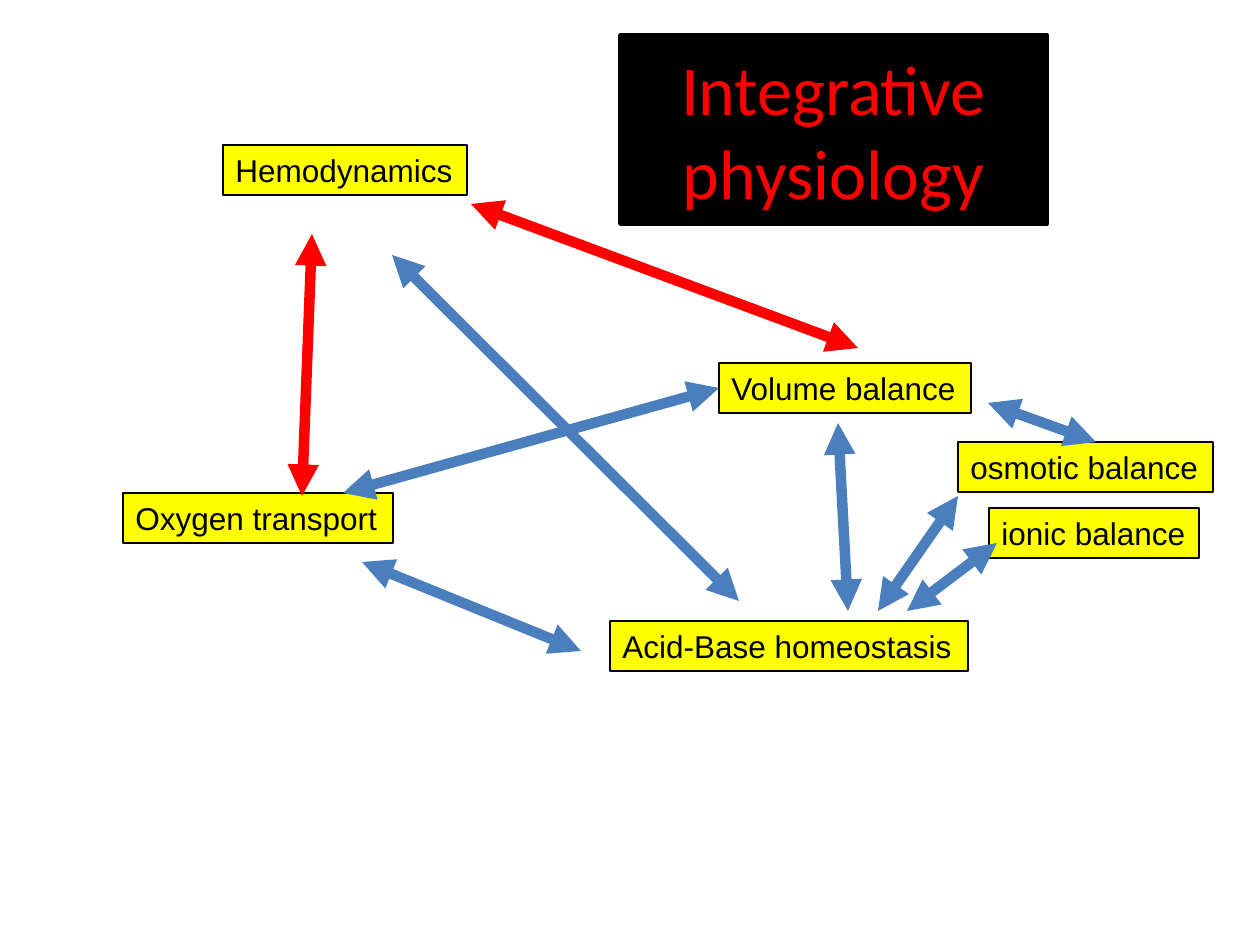
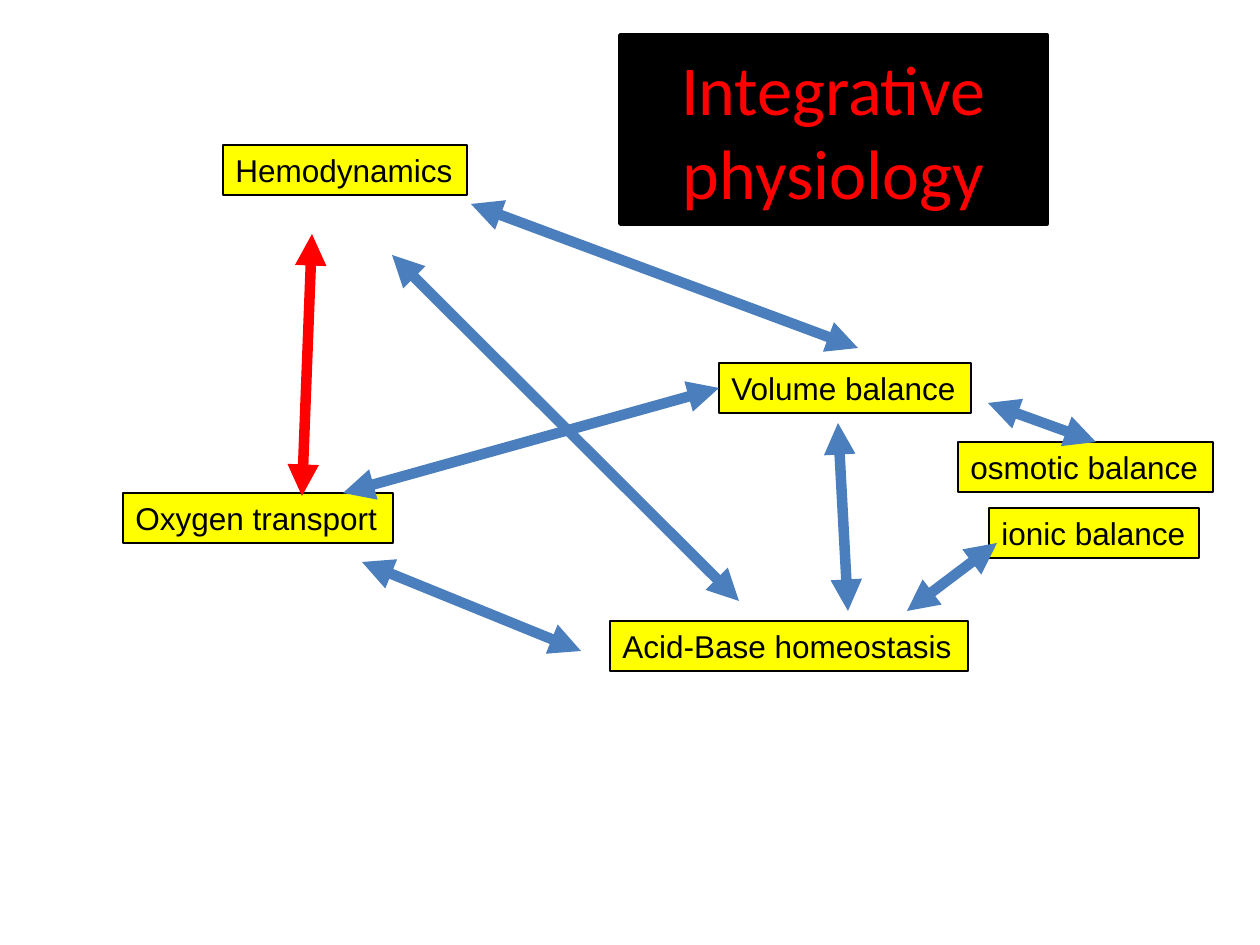
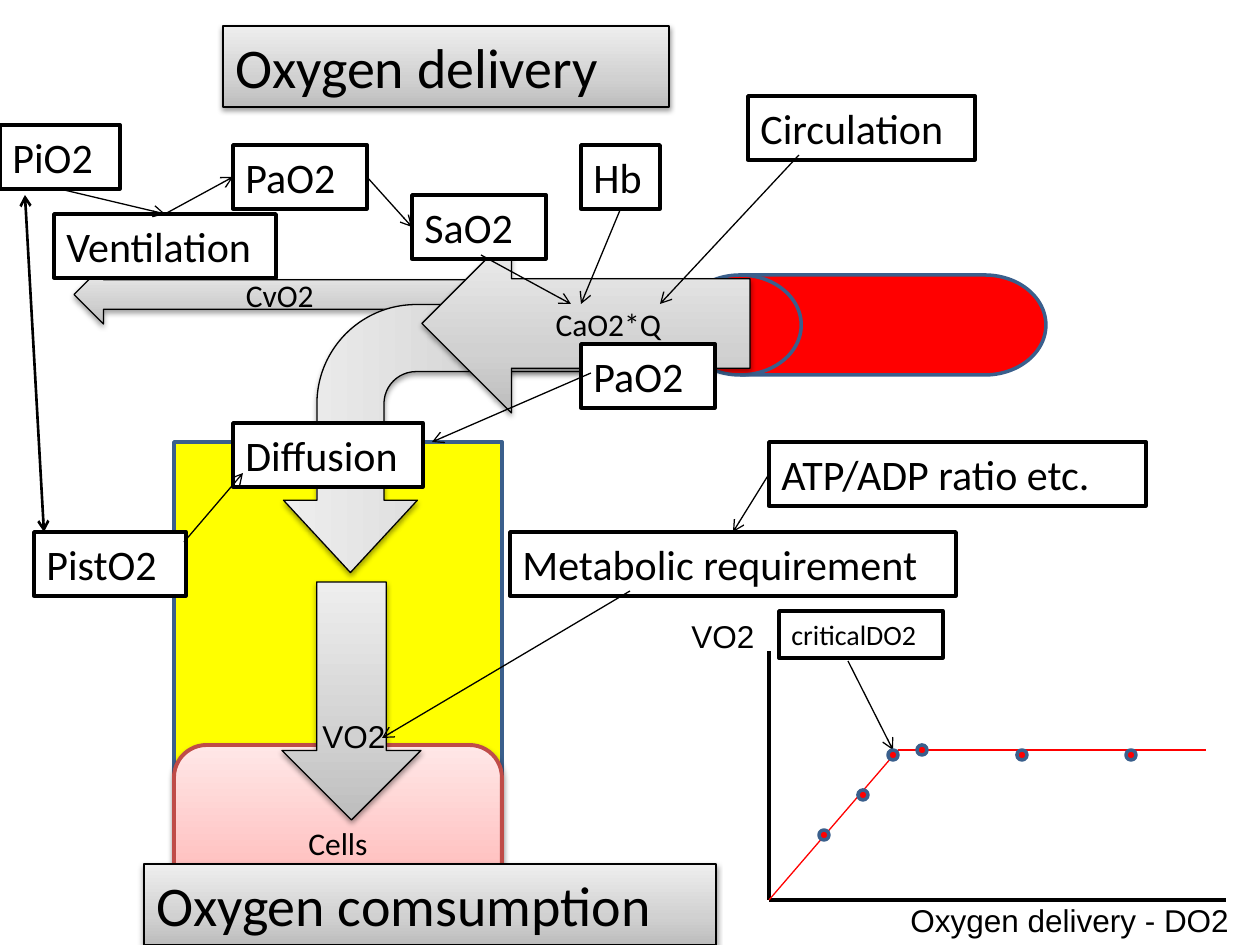
"""Build three slides on integrative physiology and oxygen delivery."""
from copy import deepcopy

from lxml.etree import SubElement
from pptx import Presentation
from pptx.dml.color import RGBColor
from pptx.enum.shapes import MSO_CONNECTOR, MSO_SHAPE
from pptx.enum.text import MSO_ANCHOR, MSO_AUTO_SIZE, PP_ALIGN
from pptx.oxml.ns import qn
from pptx.util import Emu, Pt

HEX = {
    "black": "000000", "white": "FFFFFF", "red": "FF0000", "yellow": "FFFF00",
    "blue": "4B7EBC", "navy": "3A5F8C", "brick": "BF4C48",
}
GREY = ("BDBDBD", "D1D1D1", "EEEEEE")
PINK = ("FFA6A5", "FFC0BF", "FFE7E7")
STOPS = (0, 0.35, 1)
TOP, LEFT, BOTTOM, RIGHT = range(4)
WIDE, HIGH = 1260, 945
UNIT = 914400 / 126

TOPICS = {
    "Hemodynamics": (223, 145, 244),
    "Volume balance": (719, 363, 252),
    "Oxygen transport": (123, 493, 270),
    "Acid-Base homeostasis": (610, 621, 358),
    "osmotic balance": (958, 442, 255),
    "ionic balance": (989, 508, 210),
}
BLOOD, FLUID, ACID = (
    ((312, 234), (302, 496)), ((471, 204), (858, 348)), ((958, 496), (878, 611)),
)
LINKS = (
    ((392, 255), (739, 601)), ((581, 651), (362, 562)), ((848, 611), (838, 423)),
    ((1096, 442), (988, 403)), ((997, 543), (907, 611)),
)
FACTORS = {
    "PaO2": (233, 145, 134), "SaO2": (412, 195, 134), "Hb": (581, 145, 79),
    "Circulation": (748, 96, 227), "Ventilation": (54, 214, 222),
    "PiO2": (0, 125, 120), "PistO2": (34, 532, 152), "Diffusion": (233, 423, 190),
    "Metabolic requirement": (510, 532, 446), "ATP/ADP ratio etc.": (769, 442, 377),
}
DOTS = ((1126, 750), (1017, 750), (917, 745), (888, 750), (858, 790), (819, 830))


def px(*sizes):
    """Turn whole pixels into EMU."""
    return [Emu(round(size * UNIT)) for size in sizes]


def tint(name):
    """Look up a named colour."""
    return RGBColor.from_string(HEX[name])


def blend(shape, shades):
    """Fill a shape with a three-stop gradient and give it a soft shadow."""
    shape.fill.gradient()
    shape.fill.gradient_angle = 90
    first = shape.element.spPr.find(qn("a:gradFill")).find(qn("a:gsLst"))[0]
    first.addnext(deepcopy(first))
    for stop, place, shade in zip(shape.fill.gradient_stops, STOPS, shades):
        stop.position = place
        stop.color.rgb = RGBColor.from_string(shade)
    shape.shadow.inherit = False
    effects = shape.element.spPr.find(qn("a:effectLst"))
    shadow = SubElement(effects, qn("a:outerShdw"), blurRad="40000", dist="20000",
                        dir="5400000", rotWithShape="0")
    black = SubElement(shadow, qn("a:srgbClr"), val=HEX["black"])
    SubElement(black, qn("a:alpha"), val="38000")


def paint(shape, fill, edge="black", width=0.75):
    """Set fill and outline; a tuple of shades makes a gradient."""
    shape.line.color.rgb = tint(edge)
    shape.line.width = Pt(width)
    if isinstance(fill, tuple):
        blend(shape, fill)
    else:
        shape.fill.solid()
        shape.fill.fore_color.rgb = tint(fill)


def write(shape, text, size, face="Calibri", color="black", align=PP_ALIGN.LEFT,
          anchor=MSO_ANCHOR.TOP):
    """Put one styled paragraph in a shape."""
    frame = shape.text_frame
    frame.text = text
    frame.vertical_anchor = anchor
    para = frame.paragraphs[0]
    para.alignment = align
    para.font.size, para.font.name = Pt(size), face
    para.font.color.rgb = tint(color)


def label(shapes, text, x, y, w, h, size, face="Calibri"):
    """Add a one-line text box."""
    box = shapes.add_textbox(*px(x, y, w, h))
    write(box, text, size, face)
    box.text_frame.word_wrap = False
    box.text_frame.auto_size = MSO_AUTO_SIZE.SHAPE_TO_FIT_TEXT
    return box


def factor(shapes, text, x, y, w, h=64, size=24):
    """Add a white framed label."""
    box = label(shapes, text, x, y, w, h, size)
    paint(box, "white", width=2)
    return box


def solid(shapes, kind, spot, fill, edge="black", width=0.75, text=""):
    """Add a preset shape with optional centred text."""
    shape = shapes.add_shape(kind, *px(*spot))
    shape.shadow.inherit = False
    paint(shape, fill, edge, width)
    if text:
        write(shape, text, 18, align=PP_ALIGN.CENTER, anchor=MSO_ANCHOR.MIDDLE)
    return shape


def flip(shape, axis):
    """Mirror a shape along H or V."""
    shape.element.spPr.find(qn("a:xfrm")).set("flip" + axis, "1")


def link(shapes, start, end, color="black", width=0.75, head=None, tail=None):
    """Draw a line between ends, each a point or a (box, side) pair."""
    spots = [end_ if isinstance(end_[0], int) else (0, 0) for end_ in (start, end)]
    line = shapes.add_connector(MSO_CONNECTOR.STRAIGHT, *px(*spots[0], *spots[1]))
    for spot, join in ((start, line.begin_connect), (end, line.end_connect)):
        if not isinstance(spot[0], int):
            join(*spot)
    line.line.color.rgb = tint(color)
    line.line.width = Pt(width)
    props = line.element.spPr
    for tag, tip in (("a:headEnd", head), ("a:tailEnd", tail)):
        if tip:
            SubElement(props.find(qn("a:ln")), qn(tag), type=tip)
    SubElement(props, qn("a:effectLst"))


def begin(deck, text, spot):
    """Add a title-only slide and place its title."""
    slide = deck.slides.add_slide(deck.slide_layouts[5])
    title = slide.shapes.title
    title.left, title.top, title.width, title.height = px(*spot)
    title.text_frame.text = text
    title.text_frame.word_wrap = True
    title.text_frame.auto_size = MSO_AUTO_SIZE.NONE
    return slide.shapes, title


def topics(deck, strong, weak):
    """Build the map of topics with strong links in red."""
    shapes, title = begin(deck, "Integrative physiology", (620, 35, 427, 189))
    shape = SubElement(title.element.spPr, qn("a:prstGeom"), prst="roundRect")
    SubElement(shape, qn("a:avLst"))
    paint(title, "black", width=2)
    write(title, "Integrative physiology", 40, color="red", align=PP_ALIGN.CENTER,
          anchor=MSO_ANCHOR.MIDDLE)
    boxes = {}
    for text, spot in TOPICS.items():
        boxes[text] = label(shapes, text, *spot, 50, 18, "Arial")
        paint(boxes[text], "yellow")
    volume = ((boxes["Volume balance"], LEFT), (343, 493))
    for color, pairs in (("blue", (*LINKS, volume, *weak)), ("red", strong)):
        for start, end in pairs:
            link(shapes, start, end, color, 6, "triangle", "triangle")


def tissue(shapes):
    """Draw the vessel, the tissue and the flow arrows."""
    solid(shapes, MSO_SHAPE.LEFT_ARROW, (74, 265, 397, 59), GREY, text="CvO2")
    solid(shapes, MSO_SHAPE.RECTANGLE, (174, 442, 328, 427), "yellow", "navy", 2)
    bend = solid(shapes, MSO_SHAPE.BENT_ARROW, (333, 255, 268, 367), GREY)
    bend.rotation = 90
    flip(bend, "V")
    for index, value in enumerate((0.25, 0.25, 0.27, 0.37)):
        bend.adjustments[index] = value
    solid(shapes, MSO_SHAPE.ROUNDED_RECTANGLE, (174, 745, 328, 195), PINK, "brick",
          2.25, "Cells")
    drum = solid(shapes, MSO_SHAPE.FLOWCHART_DIRECT_ACCESS_STORAGE,
                 (679, 275, 367, 100), "red", "navy", 2)
    flip(drum, "H")
    solid(shapes, MSO_SHAPE.LEFT_ARROW, (422, 234, 328, 179), GREY, text="CaO2*Q")
    uptake = shapes.add_group_shape().shapes
    solid(uptake, MSO_SHAPE.DOWN_ARROW, (282, 582, 139, 238), GREY)
    label(uptake, "VO2", 310, 711, 89, 50, 18, "Arial")
    paint(label(shapes, "Oxygen comsumption", 144, 864, 572, 81, 32), GREY)


def causes(shapes):
    """Add the factors and the arrows between them."""
    box = {text: factor(shapes, text, *spot) for text, spot in FACTORS.items()}
    factor(shapes, "PaO2", 581, 344, 134)
    vent, need = (box["Ventilation"], TOP), (box["Metabolic requirement"], TOP)
    pairs = (
        ((box["PiO2"], BOTTOM), vent),
        (vent, (box["PaO2"], LEFT)),
        ((box["PaO2"], RIGHT), (box["SaO2"], LEFT)),
        ((box["Hb"], BOTTOM), (581, 304)),
        ((481, 255), (571, 304)),
        ((799, 155), (660, 304)),
        ((591, 373), (432, 442)),
        ((184, 542), (243, 473)),
        ((630, 591), (382, 738)),
        ((box["ATP/ADP ratio etc."], LEFT), need),
    )
    for start, end in pairs:
        link(shapes, start, end, tail="arrow")
    link(shapes, (25, 195), (44, 532), width=1.5, head="arrow", tail="arrow")


def graph(shapes):
    """Sketch uptake against delivery with its critical point."""
    zero, bend = (769, 900), (898, 750)
    for end in ((769, 651), (1226, 900)):
        link(shapes, end, zero, width=2.25)
    label(shapes, "VO2", 679, 611, 89, 50, 18, "Arial")
    label(shapes, "Oxygen delivery - DO2", 898, 895, 346, 50, 18, "Arial")
    for end in ((1206, 750), zero):
        link(shapes, bend, end, "red")
    factor(shapes, "criticalDO2", 779, 611, 164, 47, 16)
    link(shapes, (848, 661), (893, 750), tail="arrow")
    for x, y in DOTS:
        solid(shapes, MSO_SHAPE.OVAL, (x, y, 10, 10), "red", "navy", 2)


def supply(deck):
    """Build the slide on oxygen delivery."""
    shapes, title = begin(deck, "Oxygen delivery", (223, 26, 446, 81))
    paint(title, GREY)
    write(title, "Oxygen delivery", 32)
    tissue(shapes)
    causes(shapes)
    graph(shapes)


def main():
    """Build and save the deck."""
    deck = Presentation()
    deck.slide_width, deck.slide_height = px(WIDE, HIGH)
    topics(deck, (BLOOD, FLUID), (ACID,))
    topics(deck, (BLOOD,), (FLUID,))
    supply(deck)
    deck.save("out.pptx")


if __name__ == "__main__":
    main()
